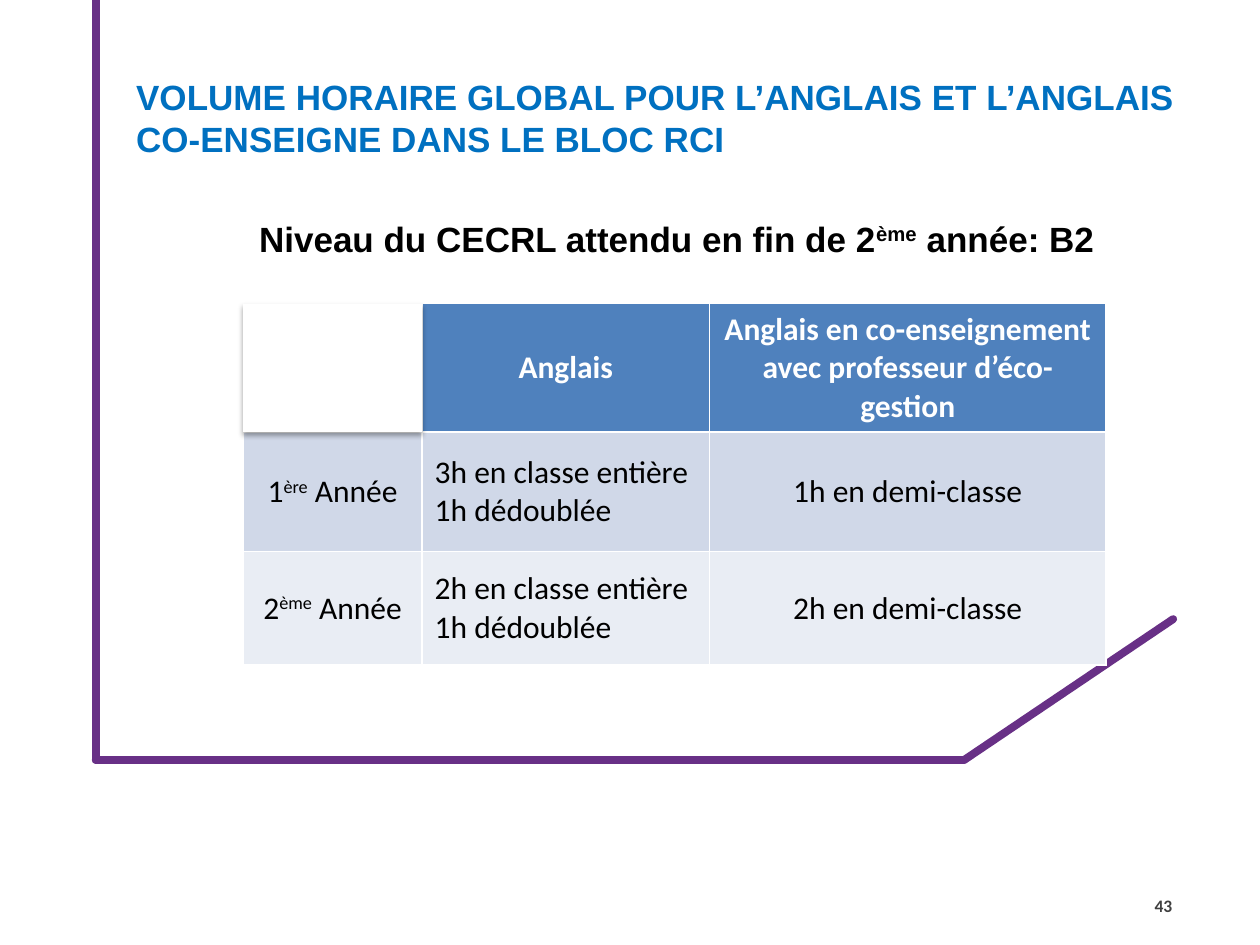
from dataclasses import dataclass
from itertools import pairwise

from pptx import Presentation
from pptx import util as u
from pptx.dml.color import RGBColor
from pptx.enum import shapes, text
from pptx.oxml import parse_xml
from pptx.oxml.ns import nsdecls, qn


@dataclass(frozen=True)
class Theme:
    """Colours, fonts and type sizes of the slide."""
    heading: str = "0070C0"
    ink: str = "000000"
    paper: str = "FFFFFF"
    frame: str = "683086"
    number: str = "404040"
    header: str = "4F81BD"
    bands: tuple = ("D0D8E8", "E9EDF4")
    display_font: str = "Arial"
    body_font: str = "Calibri"
    display_size: int = 20
    table_size: int = 18
    number_size: int = 10
    frame_width: float = 4.5


THEME = Theme()
CENTER = text.PP_ALIGN.CENTER
LEFT = text.PP_ALIGN.LEFT
RIGHT = text.PP_ALIGN.RIGHT
TABLE_ROWS = (
    (None, ["Anglais"], ["Anglais en co-enseignement avec professeur d’éco-gestion"]),
    (["1^ère^ Année"], ["3h en classe entière", "1h dédoublée"], ["1h en demi-classe"]),
    (["2^ème^ Année"], ["2h en classe entière", "1h dédoublée"], ["2h en demi-classe"]),
)


def place(shape, left, top, width, height):
    """Move and size a shape, in centimetres."""
    shape.left, shape.top = u.Cm(left), u.Cm(top)
    shape.width, shape.height = u.Cm(width), u.Cm(height)


def write(paragraph, marked, font, size, color, align, bold=False):
    """Add runs to a paragraph, with superscripts between carets."""
    paragraph.alignment = align
    for index, part in enumerate(marked.split("^")):
        run = paragraph.add_run()
        run.text = part
        run.font.name, run.font.size, run.font.bold = font, u.Pt(size), bold
        run.font.color.rgb = RGBColor.from_string(color)
        if index % 2:
            run._r.get_or_add_rPr().set("baseline", "30000")


def add_frame(slide, left, top, width, height):
    """Draw the open frame: left side, base and rising corner."""
    corner = left + 0.806 * width
    bottom = top + height
    points = [(left, top), (left, bottom), (corner, bottom),
              (left + width, bottom - 2.84)]
    for start, end in pairwise(points):
        connector = slide.shapes.add_connector(
            shapes.MSO_CONNECTOR.STRAIGHT, *map(u.Cm, start + end))
        connector.line.width = u.Pt(THEME.frame_width)
        connector.line.color.rgb = RGBColor.from_string(THEME.frame)
        properties = connector._element.spPr
        properties.find(qn("a:ln")).set("cap", "rnd")
        properties.append(parse_xml(f"<a:effectLst {nsdecls('a')}/>"))


def fill_heading(shape, box, marked, color, align):
    """Place a heading placeholder and write its line."""
    place(shape, *box)
    frame = shape.text_frame
    frame.word_wrap = True
    frame.auto_size = text.MSO_AUTO_SIZE.NONE
    frame.vertical_anchor = text.MSO_ANCHOR.TOP
    paragraph = frame.paragraphs[0]
    paragraph.space_before = u.Pt(0)
    write(paragraph, marked, THEME.display_font, THEME.display_size,
          color, align, bold=True)


def add_headings(slide, left, top, width):
    """Fill the title and the expected level below it."""
    fill_heading(slide.shapes.title, (left, top, width, 2.4),
                 "VOLUME HORAIRE GLOBAL POUR L’ANGLAIS ET L’ANGLAIS "
                 "CO-ENSEIGNE DANS LE BLOC RCI", THEME.heading, LEFT)
    fill_heading(slide.placeholders[1], (left, top + 2.85, width, 1.2),
                 "Niveau du CECRL attendu en fin de 2^ème^ année: B2",
                 THEME.ink, CENTER)


def add_corner_mask(slide, left, top, width, height):
    """Cover the empty corner cell with a raised white rectangle."""
    mask = slide.shapes.add_shape(
        shapes.MSO_SHAPE.RECTANGLE, *map(u.Cm, (left, top, width, height)))
    mask.fill.solid()
    mask.fill.fore_color.rgb = RGBColor.from_string(THEME.paper)
    mask.line.fill.background()
    mask._element.spPr.append(parse_xml(
        f'<a:effectLst {nsdecls("a")}><a:outerShdw blurRad="{u.Pt(3.1)}" '
        f'dist="{u.Pt(1.8)}" dir="5400000" rotWithShape="0">'
        f'<a:srgbClr val="{THEME.ink}"><a:alpha val="35000"/></a:srgbClr>'
        '</a:outerShdw></a:effectLst>'))


def add_hours_table(slide, left, top, widths, heights):
    """Build the table of weekly hours by year and its corner mask."""
    box = map(u.Cm, (left, top, sum(widths), sum(heights)))
    table = slide.shapes.add_table(len(heights), len(widths), *box).table
    for column, width in zip(table.columns, widths):
        column.width = u.Cm(width)
    for row_index, (row, height) in enumerate(zip(table.rows, heights)):
        row.height = u.Cm(height)
        is_header = row_index == 0
        fill = THEME.header if is_header else THEME.bands[row_index - 1]
        color = THEME.paper if is_header else THEME.ink
        for cell, lines in zip(row.cells, TABLE_ROWS[row_index]):
            cell.fill.solid()
            cell.fill.fore_color.rgb = RGBColor.from_string(fill)
            cell.vertical_anchor = text.MSO_ANCHOR.MIDDLE
            for line_index, line in enumerate(lines or []):
                frame = cell.text_frame
                paragraph = frame.add_paragraph() if line_index else frame.paragraphs[0]
                write(paragraph, line, THEME.body_font, THEME.table_size, color,
                      LEFT if len(lines) > 1 else CENTER, bold=is_header)
    add_corner_mask(slide, left, top, widths[0], heights[0])


def add_page_number(slide, left, top, width, height):
    """Write the page number at the lower right."""
    box = slide.shapes.add_textbox(*map(u.Cm, (left, top, width, height)))
    box.text_frame.word_wrap = True
    box.text_frame.vertical_anchor = text.MSO_ANCHOR.MIDDLE
    write(box.text_frame.paragraphs[0], "43", THEME.body_font,
          THEME.number_size, THEME.number, RIGHT, bold=True)


def main():
    """Build and save the presentation."""
    presentation = Presentation()
    presentation.slide_width, presentation.slide_height = u.Cm(25.4), u.Cm(19.05)
    slide = presentation.slides.add_slide(presentation.slide_layouts[0])
    add_frame(slide, 1.93, 0, 21.72, 15.32)
    add_headings(slide, 2.49, 1.4, 22.3)
    add_page_number(slide, 22.76, 17.75, 1.12, 1.02)
    add_hours_table(slide, 4.9, 6.12, (3.61, 5.79, 8), (2.59, 2.41, 2.29))
    presentation.save("out.pptx")


if __name__ == "__main__":
    main()
